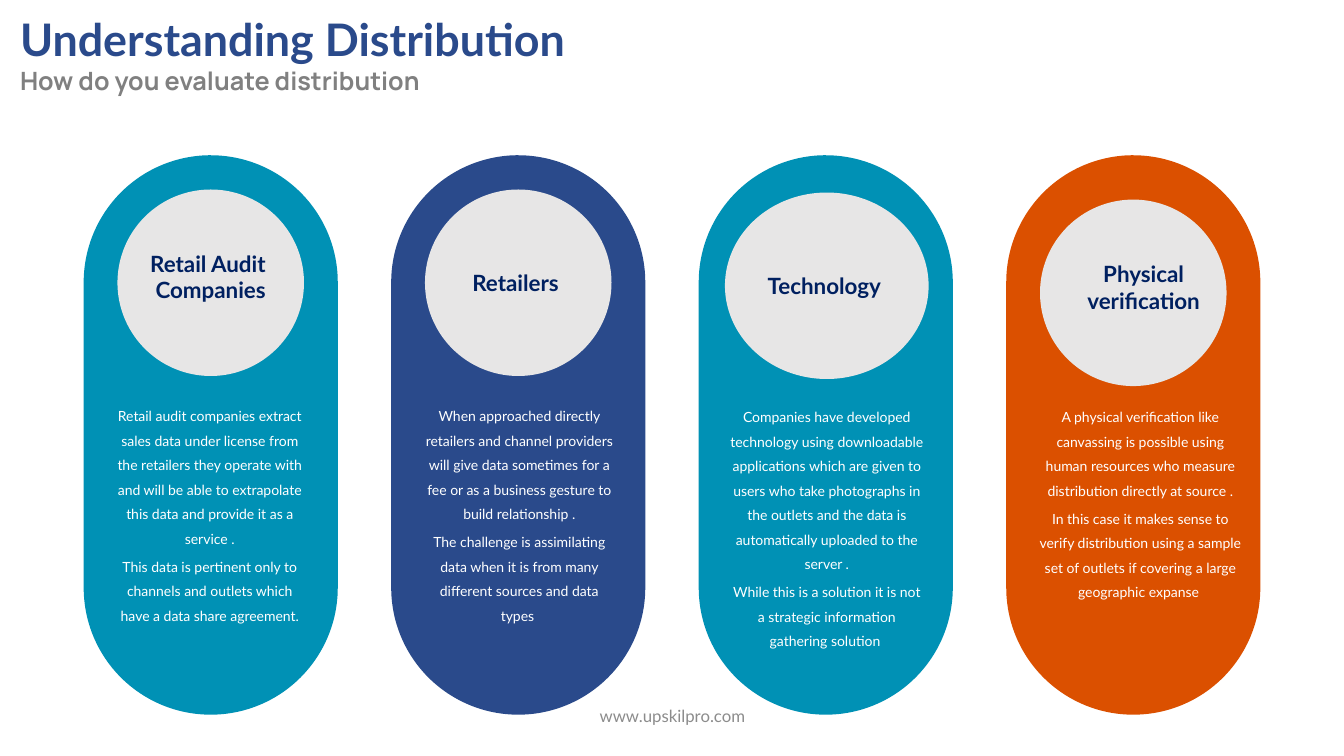
from pptx import Presentation
from pptx.dml.color import RGBColor
from pptx.enum.shapes import MSO_SHAPE
from pptx.enum.text import MSO_ANCHOR, PP_ALIGN
from pptx.util import Inches, Pt

PILL, DISC = MSO_SHAPE.ROUNDED_RECTANGLE, MSO_SHAPE.OVAL
CENTER, LEFT = PP_ALIGN.CENTER, PP_ALIGN.LEFT
TOP, MIDDLE, BOTTOM = MSO_ANCHOR.TOP, MSO_ANCHOR.MIDDLE, MSO_ANCHOR.BOTTOM

TEAL, BLUE, ORANGE = "0091B5", "2A4A8B", "DB5000"
NAVY, PALE, WHITE = "002060", "E7E6E6", "FFFFFF"

TITLE = "Understanding Distribution"
SUBTITLE = "How do you evaluate distribution"
FOOTER = "www.upskilpro.com"

# Disc and body: centre offset from the pill's centre, top, width.
# Label: the same for a heading in its own box, or None when it sits in the disc.
CARDS = [
    dict(color=TEAL, heading=["Retail Audit ", "Companies"],
         disc=(0, 1.88, 1.85), label=(0, 2.42, 1.5), body=(-0.01, 3.94, 2.02),
         paragraphs=[
             "Retail audit companies extract sales data under license from the retailers they "
             "operate with and will be able to extrapolate this data and provide it as a service .",
             "This data is pertinent only to channels and outlets which have a data share "
             "agreement."]),
    dict(color=BLUE, heading=["Retailers "],
         disc=(0, 1.88, 1.85), label=None, body=(0.01, 3.94, 2.02),
         paragraphs=[
             "When approached directly retailers and channel providers will give data sometimes "
             "for a fee or as a business gesture to build relationship .",
             "The challenge is assimilating data when it is from many different sources and data "
             "types "]),
    dict(color=TEAL, heading=["Technology "],
         disc=(0.01, 1.91, 2.02), label=None, body=(0.01, 3.95, 2.02),
         paragraphs=[
             "Companies have developed technology using downloadable applications which are given "
             "to users who take photographs in the outlets and the data is automatically uploaded "
             "to the server .",
             "While this is a solution it is not a strategic information gathering solution "]),
    dict(color=ORANGE, heading=["Physical ", "verification "],
         disc=(0, 1.98, 1.85), label=(0.13, 2.52, 1.46), body=(0.07, 3.95, 2.13),
         paragraphs=[
             "A physical verification like canvassing is possible using human resources who "
             "measure distribution directly at source .",
             "In this case it makes sense to verify distribution using a sample set of outlets if "
             "covering a large geographic expanse "]),
]

FIRST_LEFT, PITCH = 0.83, 3.05
PILL_TOP, PILL_WIDTH, PILL_HEIGHT = 1.54, 2.52, 5.55
DISC_HEIGHT, LABEL_HEIGHT, BODY_HEIGHT = 1.85, 0.64, 2.33


def rgb(color):
    return RGBColor.from_string(color)


def add_filled(page, kind, area, color):
    shape = page.shapes.add_shape(kind, *map(Inches, area))
    shape.shadow.inherit = False
    shape.fill.solid()
    shape.fill.fore_color.rgb = rgb(color)
    shape.line.fill.background()
    return shape


def add_box(page, area, wrap=True, anchor=TOP):
    box = page.shapes.add_textbox(*map(Inches, area))
    box.text_frame.word_wrap = wrap
    box.text_frame.vertical_anchor = anchor
    return box


def write(box, lines, size, color, bold=False, align=CENTER, font="Lato"):
    """Append one paragraph per line, starting with the empty first one."""
    frame = box.text_frame
    for text in lines:
        para = frame.paragraphs[0]
        if para.runs:
            para = frame.add_paragraph()
        para.alignment = align
        span = para.add_run()
        span.text = text
        span.font.name, span.font.size, span.font.bold = font, Pt(size), bold
        span.font.color.rgb = rgb(color)


def add_card(page, card, left):
    middle = left + PILL_WIDTH / 2

    def centered(place, height):
        offset, top, width = place
        return middle + offset - width / 2, top, width, height

    pill = add_filled(page, PILL, (left, PILL_TOP, PILL_WIDTH, PILL_HEIGHT), card["color"])
    pill.adjustments[0] = 0.5
    heading = add_filled(page, DISC, centered(card["disc"], DISC_HEIGHT), PALE)
    heading.text_frame.vertical_anchor = MIDDLE
    if card["label"]:
        heading = add_box(page, centered(card["label"], LABEL_HEIGHT), False, BOTTOM)
    write(heading, card["heading"], 16, NAVY, bold=True)

    body = add_box(page, centered(card["body"], BODY_HEIGHT))
    frame = body.text_frame
    frame.margin_left = frame.margin_right = Inches(0.05)
    frame.margin_top = frame.margin_bottom = Inches(0.03)
    write(body, card["paragraphs"], 10, WHITE)
    for number, para in enumerate(frame.paragraphs):
        para.line_spacing = Pt(17.5)
        para.space_before = Pt(2.4 if number else 0)


def main():
    deck = Presentation()
    deck.slide_width, deck.slide_height = Inches(13.33), Inches(7.5)
    page = deck.slides.add_slide(deck.slide_layouts[6])

    for column, card in enumerate(CARDS):
        add_card(page, card, FIRST_LEFT + column * PITCH)

    title = add_box(page, (0.1, 0.07, 8.48, 0.94))
    write(title, [TITLE], 32, BLUE, bold=True, align=LEFT)
    write(title, [SUBTITLE], 18, "808080", bold=True, align=LEFT, font="Manrope")
    write(add_box(page, (4.42, 6.95, 4.5, 0.4)), [FOOTER], 12, "8C8C8C")
    deck.save("out.pptx")


if __name__ == "__main__":
    main()
